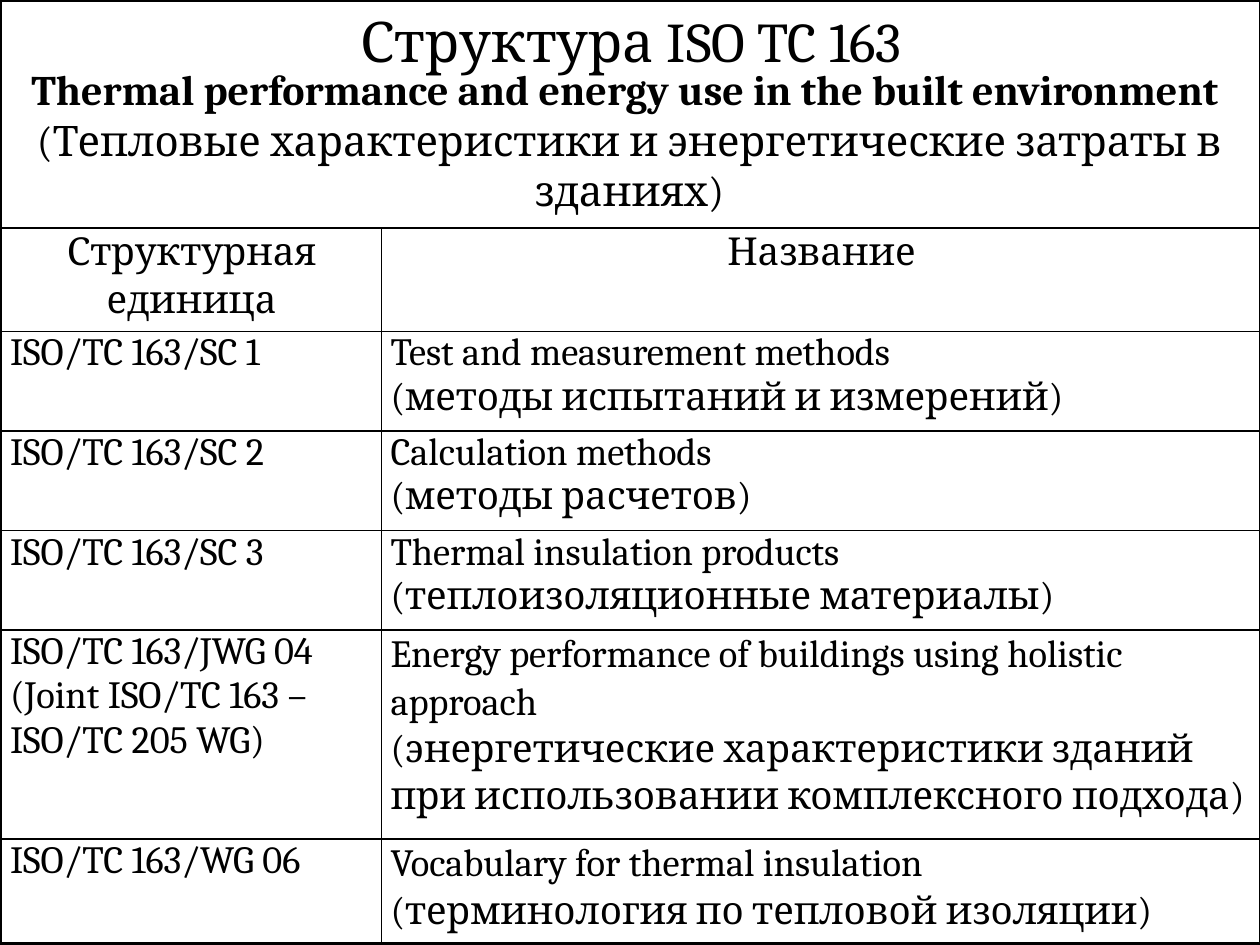
"""Build a slide showing the structure of ISO TC 163 as a bordered table."""
from pptx import Presentation
from pptx.dml.color import RGBColor
from pptx.enum.shapes import MSO_SHAPE
from pptx.enum.text import MSO_ANCHOR, MSO_AUTO_SIZE, PP_ALIGN
from pptx.oxml import parse_xml
from pptx.oxml.ns import nsdecls
from pptx.util import Inches, Pt

BLACK = RGBColor(0, 0, 0)
FONT = "Cambria"
LOOSE = 1.07

TITLE = "Структура ISO TC 163"
SUBTITLE = (
    "Thermal performance and energy use in the built environment ",
    "(Тепловые характеристики и энергетические затраты в зданиях)",
)
HEADER = ("Структурная единица", "Название")
UNITS = [
    (["ISO/TC 163/SC 1"],
     ["Test and measurement methods", "(методы испытаний и измерений)"]),
    (["ISO/TC 163/SC 2"],
     ["Calculation methods", "(методы расчетов)"]),
    (["ISO/TC 163/SC 3"],
     ["Thermal insulation products", "(теплоизоляционные материалы)"]),
    (["ISO/TC 163/JWG 04", "(Joint ISO/TC 163 – ISO/TC 205 WG)"],
     ["Energy performance of buildings using holistic approach\n"
      "(энергетические характеристики зданий при использовании комплексного подхода)"]),
    (["ISO/TC 163/WG 06"],
     ["Vocabulary for thermal insulation\n(терминология по тепловой изоляции)"]),
]
COL_WIDTHS = (3.02, 6.98)
ROW_HEIGHTS = (0.82, 0.79, 0.79, 0.79, 1.66, 0.82)


def add_run(p, text, size, bold=False):
    r = p.add_run()
    r.text = text
    r.font.name = FONT
    r.font.size = Pt(size)
    r.font.bold = bold
    r.font.color.rgb = BLACK


def add_borders(cell):
    tc_pr = cell._tc.get_or_add_tcPr()
    for i, side in enumerate(("lnL", "lnR", "lnT", "lnB")):
        tc_pr.insert(i, parse_xml(
            f'<a:{side} {nsdecls("a")} w="{Pt(1)}"><a:solidFill>'
            f'<a:srgbClr val="{BLACK}"/></a:solidFill></a:{side}>'))


def fill_cell(cell, paragraphs, align=PP_ALIGN.LEFT, spacing=None):
    cell.fill.background()
    cell.margin_left = cell.margin_right = Inches(0.07)
    cell.margin_top = cell.margin_bottom = 0
    tf = cell.text_frame
    for i, text in enumerate(paragraphs):
        p = tf.add_paragraph() if i else tf.paragraphs[0]
        p.alignment = align
        if spacing:
            p.line_spacing = spacing
        for j, line in enumerate(text.split("\n")):
            if j:
                p.add_line_break()
            add_run(p, line, 22)
    add_borders(cell)


def add_title(s):
    sp = s.shapes.title
    sp.left, sp.top, sp.width, sp.height = map(Inches, (1.86, 0, 6.3, 0.64))
    tf = sp.text_frame
    tf.auto_size = MSO_AUTO_SIZE.SHAPE_TO_FIT_TEXT
    tf.vertical_anchor = MSO_ANCHOR.TOP
    p = tf.paragraphs[0]
    p.alignment = PP_ALIGN.CENTER
    add_run(p, TITLE, 32)


def add_structure_table(s):
    size = (0.01, 1.81, sum(COL_WIDTHS), sum(ROW_HEIGHTS))
    table = s.shapes.add_table(
        len(ROW_HEIGHTS), len(COL_WIDTHS), *map(Inches, size)).table
    table.first_row = table.horz_banding = False
    for col, width in zip(table.columns, COL_WIDTHS):
        col.width = Inches(width)
    for row, height in zip(table.rows, ROW_HEIGHTS):
        row.height = Inches(height)
    for c, text in enumerate(HEADER):
        fill_cell(table.cell(0, c), [text], PP_ALIGN.CENTER, LOOSE)
    for r, unit in enumerate(UNITS, 1):
        for c, paragraphs in enumerate(unit):
            spacing = LOOSE if "\n" in paragraphs[0] else None
            fill_cell(table.cell(r, c), paragraphs, spacing=spacing)


def add_subtitle(s):
    sp = s.shapes.add_textbox(*map(Inches, (0, 0.65, 9.99, 0.91)))
    tf = sp.text_frame
    tf.word_wrap = True
    tf.auto_size = MSO_AUTO_SIZE.SHAPE_TO_FIT_TEXT
    tf.vertical_anchor = MSO_ANCHOR.MIDDLE
    p = tf.paragraphs[0]
    p.alignment = PP_ALIGN.CENTER
    english, russian = SUBTITLE
    add_run(p, english, 24, bold=True)
    p.add_line_break()
    add_run(p, russian, 24)


def add_frame(s):
    sp = s.shapes.add_shape(
        MSO_SHAPE.FLOWCHART_PROCESS, *map(Inches, (0, 0, 10.01, 7.49)))
    sp.shadow.inherit = False
    sp.fill.background()
    sp.line.color.rgb = BLACK
    sp.line.width = Pt(2)


def main():
    prs = Presentation()
    prs.slide_width, prs.slide_height = Inches(10), Inches(7.5)
    s = prs.slides.add_slide(prs.slide_layouts[5])
    add_title(s)
    add_structure_table(s)
    add_subtitle(s)
    add_frame(s)
    prs.save("out.pptx")


if __name__ == "__main__":
    main()
